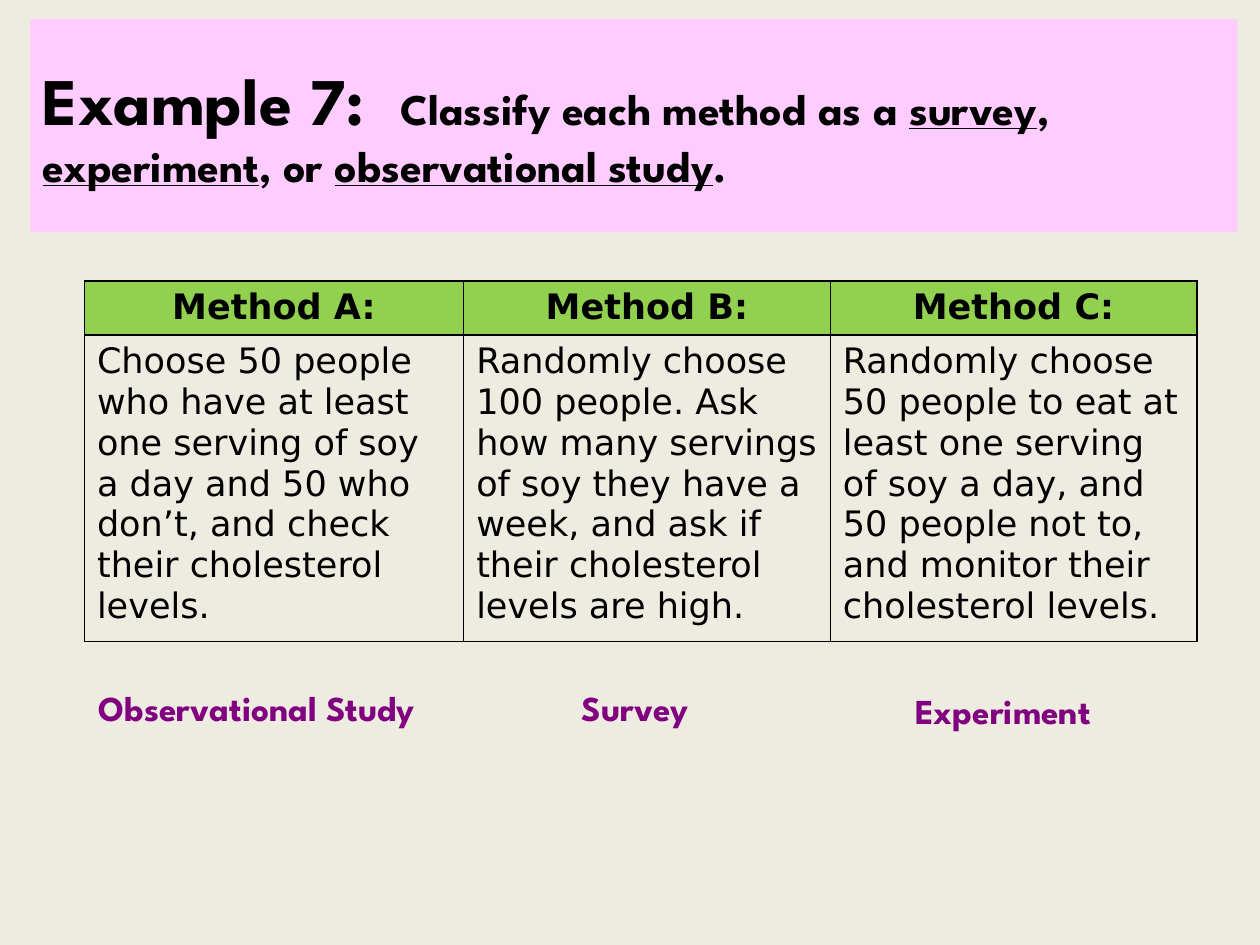
"""Build a slide that classifies three study methods, with the answers below a table."""
import pptx
import pptx.dml.color
import pptx.enum.shapes
import pptx.enum.text
import pptx.oxml
import pptx.oxml.ns
import pptx.util

RGBColor = pptx.dml.color.RGBColor
BLACK = RGBColor(0x00, 0x00, 0x00)
PURPLE = RGBColor(0x80, 0x00, 0x80)
PINK = RGBColor(0xFF, 0xCC, 0xFF)
GREEN = RGBColor(0x92, 0xD0, 0x50)
CREAM = RGBColor(0xEE, 0xEC, 0xE1)

LEFT = pptx.enum.text.PP_ALIGN.LEFT
CENTER = pptx.enum.text.PP_ALIGN.CENTER

HEADING = {"name": "League Spartan", "bold": True, "color": BLACK, "underline": False}
LARGE = {**HEADING, "size": pptx.util.Pt(38)}
PLAIN = {**HEADING, "size": pptx.util.Pt(25)}
TERM = {**PLAIN, "underline": True}
ANSWER = {**HEADING, "size": pptx.util.Pt(20), "color": PURPLE}
BODY = {"name": "DejaVu Sans", "size": pptx.util.Pt(20), "bold": False, "color": BLACK}
HEADER = {**BODY, "bold": True}

TITLE = [
    ("Example 7:  ", LARGE),
    ("Classify each method as a ", PLAIN),
    ("survey", TERM),
    (", ", PLAIN),
    ("experiment", TERM),
    (", or ", PLAIN),
    ("observational study", TERM),
    (".", PLAIN),
]
METHODS = [
    ("Method A:", "Choose 50 people who have at least one serving of soy a day "
                  "and 50 who don’t, and check their cholesterol levels."),
    ("Method B:", "Randomly choose 100 people. Ask how many servings of soy they have "
                  "a week, and ask if their cholesterol levels are high."),
    ("Method C:", "Randomly choose 50 people to eat at least one serving of soy a day, "
                  "and 50 people not to, and monitor their cholesterol levels."),
]
ANSWERS = [
    ("Observational Study", 0.5, 5.4),
    ("Survey", 3.5, 5.4),
    ("Experiment", 6.42, 5.42),
]
TITLE_BOX = (0.24, 0.15, 9.58, 1.69)
ANSWER_SIZE = (3.08, 0.44)
TABLE_ORIGIN = (0.67, 2.23)
COLUMN_WIDTHS = (3.01, 2.91, 2.91)
ROW_HEIGHTS = (0.43, 2.43)
BORDER_WIDTH = pptx.util.Pt(1)


def inches(values):
    """Convert numbers to lengths."""
    return [pptx.util.Inches(value) for value in values]


def write(text_frame, runs, alignment):
    """Write formatted runs into the first paragraph."""
    text_frame.word_wrap = True
    paragraph = text_frame.paragraphs[0]
    paragraph.alignment = alignment
    for text, style in runs:
        run = paragraph.add_run()
        run.text = text
        for attribute, value in style.items():
            if attribute == "color":
                run.font.color.rgb = value
            else:
                setattr(run.font, attribute, value)


def add_borders(cell):
    """Draw a solid line on all four sides of a cell."""
    properties = cell._tc.get_or_add_tcPr()
    for position, side in enumerate(("lnL", "lnR", "lnT", "lnB")):
        properties.insert(position, pptx.oxml.parse_xml(
            f'<a:{side} {pptx.oxml.ns.nsdecls("a")} w="{BORDER_WIDTH}">'
            f'<a:solidFill><a:srgbClr val="{BLACK}"/></a:solidFill></a:{side}>'))


def add_methods(slide):
    """Add the table with one column for each method."""
    size = (sum(COLUMN_WIDTHS), sum(ROW_HEIGHTS))
    table = slide.shapes.add_table(
        len(ROW_HEIGHTS), len(METHODS), *inches(TABLE_ORIGIN + size)).table
    table.horz_banding = False
    for row, height in zip(table.rows, inches(ROW_HEIGHTS)):
        row.height = height
    for column, width in zip(table.columns, inches(COLUMN_WIDTHS)):
        column.width = width
    for column_index, texts in enumerate(METHODS):
        for row_index, text in enumerate(texts):
            cell = table.cell(row_index, column_index)
            if row_index == 0:
                cell.fill.solid()
                cell.fill.fore_color.rgb = GREEN
                write(cell.text_frame, [(text, HEADER)], CENTER)
            else:
                cell.fill.background()
                write(cell.text_frame, [(text, BODY)], LEFT)
            add_borders(cell)


def add_answers(slide):
    """Add the answer below each method."""
    for text, left, top in ANSWERS:
        box = slide.shapes.add_textbox(*inches((left, top) + ANSWER_SIZE))
        write(box.text_frame, [(text, ANSWER)], CENTER)
        box.text_frame.auto_size = pptx.enum.text.MSO_AUTO_SIZE.SHAPE_TO_FIT_TEXT


def add_title(slide):
    """Add the title panel."""
    panel = slide.shapes.add_shape(
        pptx.enum.shapes.MSO_SHAPE.RECTANGLE, *inches(TITLE_BOX))
    panel.shadow.inherit = False
    panel.fill.solid()
    panel.fill.fore_color.rgb = PINK
    panel.line.fill.background()
    panel.text_frame.vertical_anchor = pptx.enum.text.MSO_ANCHOR.MIDDLE
    write(panel.text_frame, TITLE, LEFT)


def main():
    """Build and save the presentation."""
    presentation = pptx.Presentation()
    presentation.slide_width, presentation.slide_height = inches((10, 7.5))
    slide = presentation.slides.add_slide(presentation.slide_layouts[6])
    slide.background.fill.solid()
    slide.background.fill.fore_color.rgb = CREAM
    add_methods(slide)
    add_answers(slide)
    add_title(slide)
    presentation.save("out.pptx")


if __name__ == "__main__":
    main()
